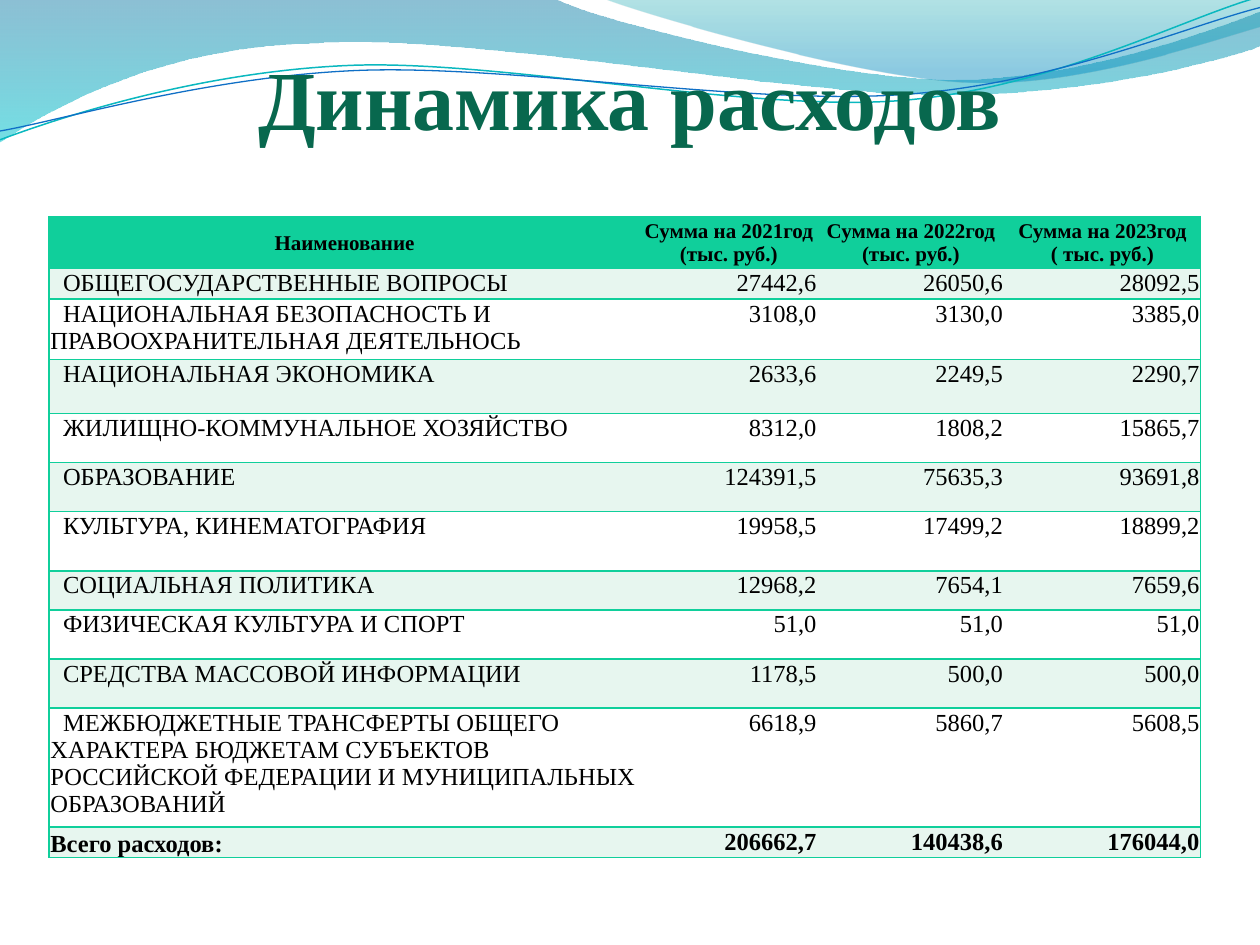
"""Build a slide with a wave header and a table of budget expenditure by year."""
from lxml import etree
from pptx import Presentation, util as u
from pptx.dml import color
from pptx.enum import text
from pptx.oxml import ns

FONT = "Times New Roman"
GREEN = "10CF9B"


def rgb(value):
    return color.RGBColor.from_string(value)


def draw_curve(page, start, segments, closed):
    values = [value for segment in segments for value in segment]
    points = [(u.Inches(x), u.Inches(y)) for x, y in zip(values[::2], values[1::2])]
    builder = page.shapes.build_freeform(u.Inches(start[0]), u.Inches(start[1]), scale=1.0)
    builder.add_line_segments(points, close=closed)
    shape = builder.convert_to_shape()
    shape.shadow.inherit = False
    lines = iter(list(shape.element.iter(ns.qn("a:lnTo"))))
    for segment in segments:
        line = next(lines)
        if len(segment) == 6:
            line.tag = ns.qn("a:cubicBezTo")
            for _ in range(2):
                extra = next(lines)
                line.append(extra[0])
                extra.getparent().remove(extra)
    return shape


deck = Presentation()
deck.slide_width, deck.slide_height = u.Inches(10), u.Inches(7.5)
page = deck.slides.add_slide(deck.slide_layouts[6])

waves = [
    {"start": (0, 0),
     "segments": [(4.4, -0.01), (4.76, 0.17, 6.64, 0.63, 7.58, 0.63),
                  (8.53, 0.63, 9.58, 0.26, 10, 0.09), (10.01, 0.36),
                  (9.83, 0.44, 8.7, 0.76, 7.46, 0.75),
                  (6.22, 0.75, 3.82, 0.28, 2.57, 0.34),
                  (1.29, 0.36, 0.46, 0.83, -0.01, 1.13), (0, 0)],
     "stops": [(0, "0074A1", 45), (1, "00C6CF", 55)]},
    {"start": (4.79, -0.01),
     "segments": [(5.09, 0.11, 6.82, 0.62, 7.69, 0.65),
                  (8.56, 0.69, 9.61, 0.32, 10, 0.21), (10, 0), (4.79, -0.01)],
     "stops": [(0, "00A1A9", 30), (0.8, "008BBF", 45)]},
    {"start": (0, 1.11),
     "segments": [(0.48, 0.93, 1.58, 0.57, 2.77, 0.52),
                  (3.95, 0.47, 5.93, 0.89, 7.13, 0.8),
                  (8.33, 0.71, 9.38, 0.15, 9.98, -0.02)],
     "line": ("0AB8BF", 0.85)},
    {"start": (0, 1.04),
     "segments": [(0.47, 0.96, 1.64, 0.61, 2.83, 0.56),
                  (4.03, 0.51, 5.97, 0.84, 7.17, 0.75),
                  (8.36, 0.67, 9.41, 0.21, 10, 0.06)],
     "line": ("0F6FC6", 0.75)},
]
for wave in waves:
    shape = draw_curve(page, wave["start"], wave["segments"], "stops" in wave)
    if "stops" in wave:
        shape.line.fill.background()
        shape.fill.gradient()
        shape.fill.gradient_angle = 270
        for stop, (position, tint, _) in zip(shape.fill.gradient_stops, wave["stops"]):
            stop.position = position
            stop.color.rgb = rgb(tint)
        tints = list(shape.element.spPr.iter(ns.qn("a:srgbClr")))
        for tint, (_, _, opacity) in zip(tints, wave["stops"]):
            etree.SubElement(tint, ns.qn("a:alpha"), val=str(opacity * 1000))
    else:
        shape.fill.background()
        tint, width = wave["line"]
        shape.line.color.rgb = rgb(tint)
        shape.line.width = u.Pt(width)

title = page.shapes.add_textbox(u.Inches(0.5), u.Inches(0.15), u.Inches(9), u.Inches(1.02))
frame = title.text_frame
for name, value in {"word_wrap": True, "vertical_anchor": text.MSO_ANCHOR.BOTTOM,
                    "margin_left": 0, "margin_right": 0, "margin_bottom": 0,
                    "margin_top": u.Inches(0.05)}.items():
    setattr(frame, name, value)
para = frame.paragraphs[0]
para.alignment = text.PP_ALIGN.CENTER
span = para.add_run()
span.text = "Динамика расходов"
for name, value in {"name": FONT, "size": u.Pt(48), "bold": True}.items():
    setattr(span.font, name, value)
span.font.color.rgb = rgb("08684E")

rows = [
    (0.4, "Наименование", "Сумма на 2021год (тыс. руб.)", "Сумма на 2022год (тыс. руб.)",
     "Сумма на 2023год ( тыс. руб.)"),
    (0.23, "ОБЩЕГОСУДАРСТВЕННЫЕ ВОПРОСЫ", "27442,6", "26050,6", "28092,5"),
    (0.44, "НАЦИОНАЛЬНАЯ БЕЗОПАСНОСТЬ И ПРАВООХРАНИТЕЛЬНАЯ ДЕЯТЕЛЬНОСЬ",
     "3108,0", "3130,0", "3385,0"),
    (0.43, "НАЦИОНАЛЬНАЯ ЭКОНОМИКА", "2633,6", "2249,5", "2290,7"),
    (0.39, "ЖИЛИЩНО-КОММУНАЛЬНОЕ ХОЗЯЙСТВО", "8312,0", "1808,2", "15865,7"),
    (0.39, "ОБРАЗОВАНИЕ", "124391,5", "75635,3", "93691,8"),
    (0.47, "КУЛЬТУРА, КИНЕМАТОГРАФИЯ", "19958,5", "17499,2", "18899,2"),
    (0.31, "СОЦИАЛЬНАЯ ПОЛИТИКА", "12968,2", "7654,1", "7659,6"),
    (0.39, "ФИЗИЧЕСКАЯ КУЛЬТУРА И СПОРТ", "51,0", "51,0", "51,0"),
    (0.39, "СРЕДСТВА МАССОВОЙ ИНФОРМАЦИИ", "1178,5", "500,0", "500,0"),
    (0.87, "МЕЖБЮДЖЕТНЫЕ ТРАНСФЕРТЫ ОБЩЕГО ХАРАКТЕРА БЮДЖЕТАМ СУБЪЕКТОВ "
     "РОССИЙСКОЙ ФЕДЕРАЦИИ И МУНИЦИПАЛЬНЫХ ОБРАЗОВАНИЙ", "6618,9", "5860,7", "5608,5"),
    (0.22, "Всего расходов:", "206662,7", "140438,6", "176044,0"),
]
widths = [4.69, 1.41, 1.48, 1.56]
last_row, last_column = len(rows) - 1, len(widths) - 1
table = page.shapes.add_table(len(rows), len(widths), u.Inches(0.39), u.Inches(1.72),
                              u.Inches(sum(widths)), u.Inches(sum(row[0] for row in rows))).table
for column, width in zip(table.columns, widths):
    column.width = u.Inches(width)

for r, (height, *values) in enumerate(rows):
    table.rows[r].height = u.Inches(height)
    header, total = r == 0, r == last_row
    for c, value in enumerate(values):
        cell = table.cell(r, c)
        usual = text.MSO_ANCHOR.MIDDLE if header else text.MSO_ANCHOR.TOP
        anchor = text.MSO_ANCHOR.BOTTOM if total and c == 0 else usual
        for name, setting in {"margin_left": u.Inches(0.01), "margin_right": u.Inches(0.01),
                              "margin_top": u.Inches(0.01), "margin_bottom": 0,
                              "vertical_anchor": anchor}.items():
            setattr(cell, name, setting)
        properties = cell._tc.get_or_add_tcPr()
        drawn = {"L": c == 0, "R": c == last_column, "T": True, "B": True}
        for side, visible in drawn.items():
            edge = etree.SubElement(properties, ns.qn(f"a:ln{side}"), w=str(u.Pt(1)))
            paint = etree.SubElement(edge, ns.qn("a:solidFill" if visible else "a:noFill"))
            if visible:
                etree.SubElement(paint, ns.qn("a:srgbClr"), val=GREEN)
        cell.fill.solid()
        cell.fill.fore_color.rgb = rgb(GREEN if header else "E7F6EF" if r % 2 else "FFFFFF")

        cell.text = value
        para = cell.text_frame.paragraphs[0]
        if header:
            para.alignment = text.PP_ALIGN.CENTER
        elif c:
            para.alignment = text.PP_ALIGN.RIGHT
        else:
            para.alignment = text.PP_ALIGN.LEFT
            if not total:
                para._p.get_or_add_pPr().set("indent", str(u.Inches(0.1)))
        for span in para.runs:
            for name, setting in {"name": FONT, "size": u.Pt(12 if header else 14),
                                  "bold": header or total}.items():
                setattr(span.font, name, setting)
            span.font.color.rgb = rgb("000000")

deck.save("out.pptx")
